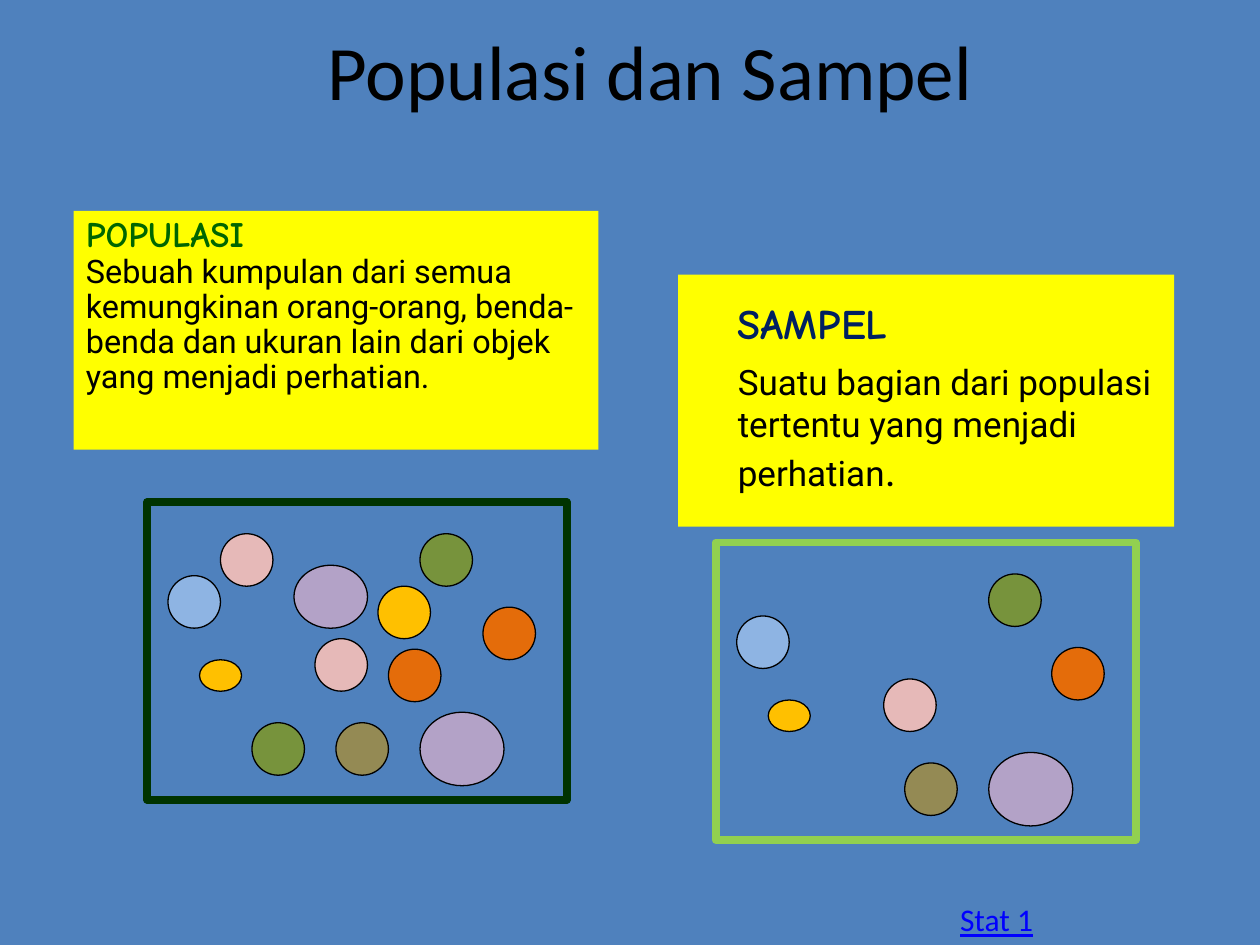
import pptx
import pptx.dml.color
import pptx.enum.shapes
import pptx.enum.text
import pptx.util

Pt = pptx.util.Pt
SHAPE = pptx.enum.shapes.MSO_SHAPE
ALIGN = pptx.enum.text.PP_ALIGN
ANCHOR = pptx.enum.text.MSO_ANCHOR

BLACK = "000000"
YELLOW = "FFFF00"
PINK, PURPLE, ORANGE, AMBER = "E6B9B8", "B3A2C7", "E46C0A", "FFC000"
KHAKI, GREEN, SKY = "948A54", "77933C", "8EB4E3"

# Members of the population: x, y inside the frame, width, height, colour, in the sample?
MEMBERS = [
    (42, 18, 30, 30, PINK, False),
    (84, 36, 42, 36, PURPLE, False),
    (192, 60, 30, 30, ORANGE, True),
    (96, 78, 30, 30, PINK, True),
    (30, 90, 24, 18, AMBER, True),
    (108, 126, 30, 30, KHAKI, True),
    (60, 126, 30, 30, GREEN, False),
    (12, 42, 30, 30, SKY, True),
    (132, 48, 30, 30, AMBER, False),
    (156, 120, 48, 42, PURPLE, True),
    (138, 84, 30, 30, ORANGE, False),
    (156, 18, 30, 30, GREEN, True),
]


def set_color(color_format, hex_color):
    color_format.rgb = pptx.dml.color.RGBColor.from_string(hex_color)


def set_fill(fill, hex_color):
    if hex_color is None:
        fill.background()
    else:
        fill.solid()
        set_color(fill.fore_color, hex_color)


def add_run(paragraph, text, size, font, color=BLACK, bold=False, underline=False):
    run = paragraph.add_run()
    run.text = text
    run.font.size = Pt(size)
    run.font.name = font
    run.font.bold = bold
    run.font.underline = underline
    set_color(run.font.color, color)


def add_figure(shapes, kind, x, y, width, height, fill=None, line=None, line_width=0.75):
    figure = shapes.add_shape(kind, Pt(x), Pt(y), Pt(width), Pt(height))
    figure.shadow.inherit = False
    set_fill(figure.fill, fill)
    set_fill(figure.line.fill, line)
    if line:
        figure.line.width = Pt(line_width)
    return figure


def add_title(slide, text):
    title = slide.shapes.title
    title.left, title.top, title.width, title.height = Pt(39.5), Pt(6), Pt(664), Pt(67.5)
    title.text_frame.vertical_anchor = ANCHOR.MIDDLE
    paragraph = title.text_frame.paragraphs[0]
    paragraph.alignment = ALIGN.CENTER
    add_run(paragraph, text, 44, "Calibri")


def add_definition(slide, x, y, width, height, top_inset=3.6):
    """Yellow panel; returns the paragraphs for its term and its meaning."""
    panel = add_figure(slide.shapes, SHAPE.RECTANGLE, x, y, width, height, YELLOW)
    frame = panel.text_frame
    frame.word_wrap = True
    frame.vertical_anchor = ANCHOR.TOP
    frame.margin_top = Pt(top_inset)
    term, meaning = frame.paragraphs[0], frame.add_paragraph()
    for paragraph in (term, meaning):
        paragraph.alignment = ALIGN.LEFT
    return term, meaning


def add_collection(slide, x, y, frame_color, members):
    """Framed group of ellipses."""
    collection = slide.shapes.add_group_shape().shapes
    add_figure(collection, SHAPE.RECTANGLE, x, y, 240, 170, line=frame_color, line_width=4.5)
    for dx, dy, width, height, color, _ in members:
        add_figure(collection, SHAPE.OVAL, x + dx, y + dy, width, height, color, BLACK)


def add_course_label(slide, text):
    label = slide.shapes.add_textbox(Pt(541.5), Pt(511), Pt(57), Pt(29))
    label.text_frame.word_wrap = False
    add_run(label.text_frame.paragraphs[0], text, 18, "Calibri", "0000FF", underline=True)


def main():
    deck = pptx.Presentation()
    deck.slide_width, deck.slide_height = Pt(720), Pt(540)
    slide = deck.slides.add_slide(deck.slide_layouts[5])
    set_fill(slide.background.fill, "4F81BD")

    add_course_label(slide, "Stat 1")
    add_title(slide, "Populasi dan Sampel")

    # Definition of the population
    term, meaning = add_definition(slide, 42, 120.5, 300, 136.5)
    term.line_spacing = meaning.line_spacing = 0.9
    add_run(term, "POPULASI", 20.4, "Comic Neue", "006600", bold=True)
    add_run(meaning, "Sebuah kumpulan dari semua kemungkinan orang-orang, benda-benda "
            "dan ukuran lain dari objek yang menjadi perhatian.", 18.5, "Roboto")

    # Definition of the sample, indented
    term, meaning = add_definition(slide, 387.5, 157, 283.5, 144, top_inset=13)
    for paragraph in (term, meaning):
        paragraph._p.get_or_add_pPr().set("marL", str(Pt(27)))
    meaning.space_before = Pt(7)
    add_run(term, "SAMPEL", 24, "Comic Neue", "002060", bold=True)
    add_run(meaning, "Suatu bagian dari populasi tertentu yang menjadi perhatian", 20, "Roboto")
    add_run(meaning, ".", 24, "Roboto")

    # The sample shows the chosen members at their places in the population
    add_collection(slide, 84, 287, "003300", MEMBERS)
    add_collection(slide, 409, 310, "92D050", [member for member in MEMBERS if member[-1]])

    deck.save("out.pptx")


if __name__ == "__main__":
    main()
